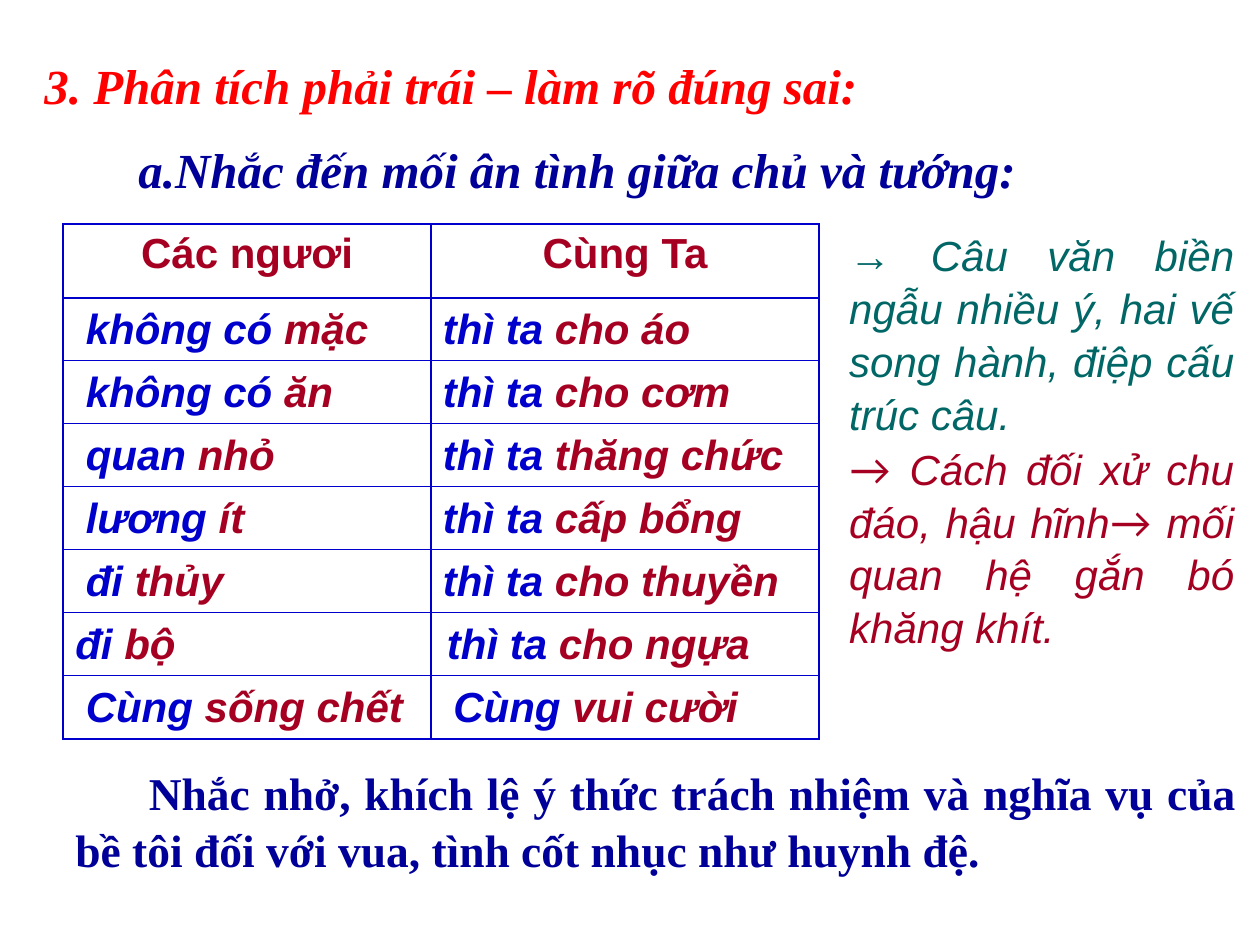
from lxml.etree import SubElement as Sub
from pptx import Presentation
from pptx.dml.color import RGBColor as RGB
from pptx.enum.text import MSO_ANCHOR as Anchor, MSO_AUTO_SIZE as Auto, PP_ALIGN as Align
from pptx.oxml.ns import qn
from pptx.util import Cm, Pt

HUES = {"red": "FF0000", "navy": "000099", "blue": "0000CC",
        "wine": "A50021", "teal": "006666"}
SERIF, SANS = "Times New Roman", "Arial"

deck = Presentation()
deck.slide_width, deck.slide_height = Cm(25.4), Cm(19.05)
slide = deck.slides.add_slide(deck.slide_layouts[5])


def style(par, size, face, bold=True, slant=True, align=Align.LEFT):
    par.alignment = align
    font = par.font
    font.size, font.name, font.bold, font.italic = Pt(size), face, bold, slant


def write(shape, place, parts, size, face, **look):
    shape.left, shape.top, shape.width, shape.height = [Cm(n) for n in place]
    frame = shape.text_frame
    frame.word_wrap = True
    frame.auto_size = Auto.NONE
    frame.vertical_anchor = Anchor.TOP
    par = frame.paragraphs[0]
    par.line_spacing = 1.05
    style(par, size, face, **look)
    for text, hue in parts:
        run = par.add_run()
        run.text = text
        run.font.color.rgb = RGB.from_string(HUES[hue])
    return par


write(slide.shapes.title, (0.64, 0.94, 24.56, 1.45),
      [("3. Phân tích phải trái – làm rõ đúng sai:", "red")], 28, SERIF)

blank = (0, 0, 0, 0)
write(slide.shapes.add_textbox(*blank), (2.54, 2.62, 22.86, 1.45),
      [("a.Nhắc đến mối ân tình giữa chủ và tướng:", "navy")], 28, SERIF)

rows = [
    (1.48, "không có ", "mặc", 8.68, "thì ta ", "cho áo"),
    (1.48, "không có ", "ăn", 8.68, "thì ta ", "cho cơm"),
    (1.48, "quan ", "nhỏ", 8.68, "thì ta ", "thăng chức"),
    (1.48, "lương ", "ít", 8.68, "thì ta ", "cấp bổng"),
    (1.48, "đi ", "thủy", 8.68, "thì ta ", "cho thuyền"),
    (1.27, "đi ", "bộ", 8.76, "thì ta ", "cho ngựa"),
    (1.48, "Cùng ", "sống chết", 8.89, "Cùng ", "vui cười"),
]
step, last = 1.27, len(rows)
grid = slide.shapes.add_table(last + 1, 2, Cm(1.27), Cm(4.52),
                              Cm(15.24), Cm(1.48 + last * step)).table
grid.first_row = grid.horz_banding = False
grid.columns[0].width, grid.columns[1].width = Cm(7.42), Cm(7.82)
for r, row in enumerate(grid.rows):
    row.height = Cm(step if r else 1.48)
    for c, cell in enumerate(row.cells):
        sides = {"L": c == 0, "R": c == 1, "T": r < 2, "B": r in (0, last)}
        props = cell._tc.get_or_add_tcPr()
        for side, thick in sides.items():
            line = Sub(props, qn("a:ln" + side), w=str(Pt(1.5 if thick else 1)))
            Sub(Sub(line, qn("a:solidFill")), qn("a:srgbClr"), val=HUES["blue"])
        cell.fill.background()

for cell, text in zip(grid.rows[0].cells, ("Các ngươi", "Cùng Ta")):
    cell.text = text
    par = cell.text_frame.paragraphs[0]
    style(par, 24, SANS, slant=False, align=Align.CENTER)
    par.font.color.rgb = RGB.from_string(HUES["wine"])

for r, (left, cause, need, right, reply, gift) in enumerate(rows):
    top = 5.92 + r * step
    for x, start, end in ((left, cause, need), (right, reply, gift)):
        write(slide.shapes.add_textbox(*blank), (x, top, 7.4, 1.27),
              [(start, "blue"), (end, "wine")], 24, SANS)

notes = [
    (4.45, "teal", ["→ Câu văn biền ngẫu nhiều ý, hai vế song hành, điệp cấu trúc câu."]),
    (8.76, "wine", ["→", " Cách đối xử chu đáo, hậu hĩnh", "→",
                    " mối quan hệ gắn bó khăng khít."]),
]
for top, hue, texts in notes:
    par = write(slide.shapes.add_textbox(*blank), (16.87, top, 8.26, 4.32),
                [(text, hue) for text in texts], 24, SANS,
                bold=False, align=Align.JUSTIFY)
    for run in par.runs:
        if run.text == "→":
            run.font.name = "Lato"

par = write(slide.shapes.add_textbox(*blank), (1.27, 15.24, 23.93, 2.46),
            [("Nhắc nhở, khích lệ ý thức trách nhiệm và nghĩa vụ của bề tôi "
              "đối với vua, tình cốt nhục như huynh đệ.", "navy")],
            26, SERIF, slant=False, align=Align.JUSTIFY)
par._p.get_or_add_pPr().set("indent", str(Cm(1.48)))

deck.save("out.pptx")
